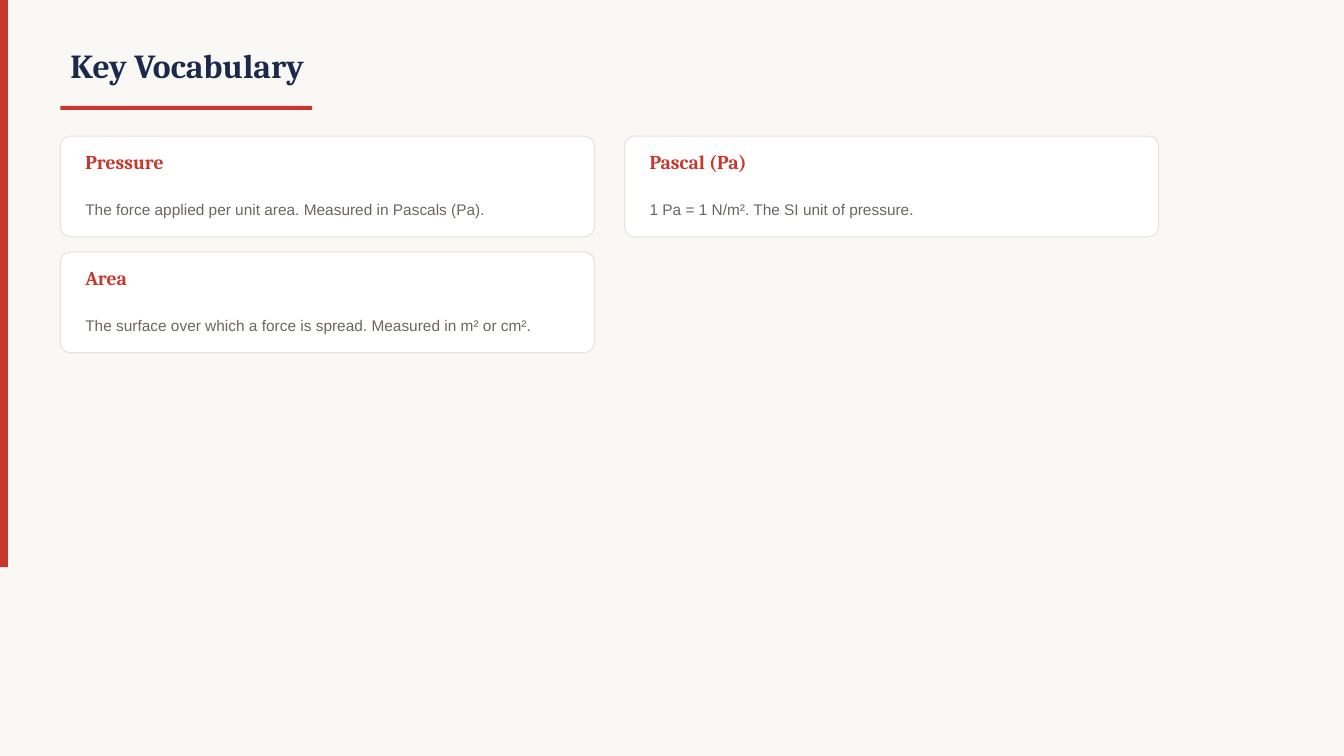
"""Build the Key Vocabulary slide with its grid of definition cards."""
from pptx import Presentation
from pptx.dml.color import RGBColor
from pptx.enum import shapes, text
from pptx.util import Cm, Pt

RED = RGBColor(0xC8, 0x37, 0x2D)
NAVY = RGBColor(0x1B, 0x2A, 0x4A)
GREY = RGBColor(0x6B, 0x66, 0x60)
BORDER = RGBColor(0xE5, 0xE2, 0xDC)
CREAM = RGBColor(0xFA, 0xF8, 0xF5)
WHITE = RGBColor(0xFF, 0xFF, 0xFF)

TERMS = [
    ("Pressure", "The force applied per unit area. Measured in Pascals (Pa)."),
    ("Pascal (Pa)", "1 Pa = 1 N/m². The SI unit of pressure."),
    ("Area", "The surface over which a force is spread. Measured in m² or cm²."),
]


def write(box, words, *, font, size, color, bold=False, spacing=1.0):
    frame = box.text_frame
    frame.word_wrap = True
    frame.auto_size = text.MSO_AUTO_SIZE.NONE
    frame.vertical_anchor = text.MSO_ANCHOR.MIDDLE
    para = frame.paragraphs[0]
    para.alignment = text.PP_ALIGN.LEFT
    para.line_spacing = spacing
    span = para.add_run()
    span.text = words
    span.font.name = font
    span.font.size = Pt(size)
    span.font.bold = bold
    span.font.color.rgb = color


def add_panel(page, kind, left, top, width, height, fill):
    panel = page.shapes.add_shape(kind, left, top, width, height)
    panel.shadow.inherit = False
    panel.fill.solid()
    panel.fill.fore_color.rgb = fill
    panel.line.fill.background()
    return panel


deck = Presentation()
deck.slide_width, deck.slide_height = Cm(33.87), Cm(19.05)
page = deck.slides.add_slide(deck.slide_layouts[5])
page.background.fill.solid()
page.background.fill.fore_color.rgb = CREAM

rectangle = shapes.MSO_SHAPE.RECTANGLE
margin = Cm(1.52)
add_panel(page, rectangle, 0, 0, Cm(0.2), Cm(14.29), RED)

title = page.shapes.title
title.left, title.top, title.width, title.height = margin, Cm(0.76), Cm(25.4), Cm(1.78)
write(title, "Key Vocabulary", font="Cambria", size=24, color=NAVY, bold=True)
add_panel(page, rectangle, margin, Cm(2.67), Cm(6.35), Cm(0.1), RED)

for index, (term, meaning) in enumerate(TERMS):
    row, column = divmod(index, 2)
    left = margin + column * Cm(14.22)
    top = Cm(3.43) + row * Cm(2.92)
    card = add_panel(page, shapes.MSO_SHAPE.ROUNDED_RECTANGLE,
                     left, top, Cm(13.46), Cm(2.54), WHITE)
    card.adjustments[0] = 0.1
    card.line.color.rgb = BORDER
    card.line.width = Pt(0.75)

    text_left = left + Cm(0.38)
    heading = page.shapes.add_textbox(text_left, top + Cm(0.2), Cm(12.7), Cm(0.89))
    write(heading, term, font="Cambria", size=14, color=RED, bold=True)
    definition = page.shapes.add_textbox(text_left, top + Cm(1.14), Cm(12.7), Cm(1.27))
    write(definition, meaning, font="Arial", size=11, color=GREY, spacing=1.3)

deck.save("out.pptx")
